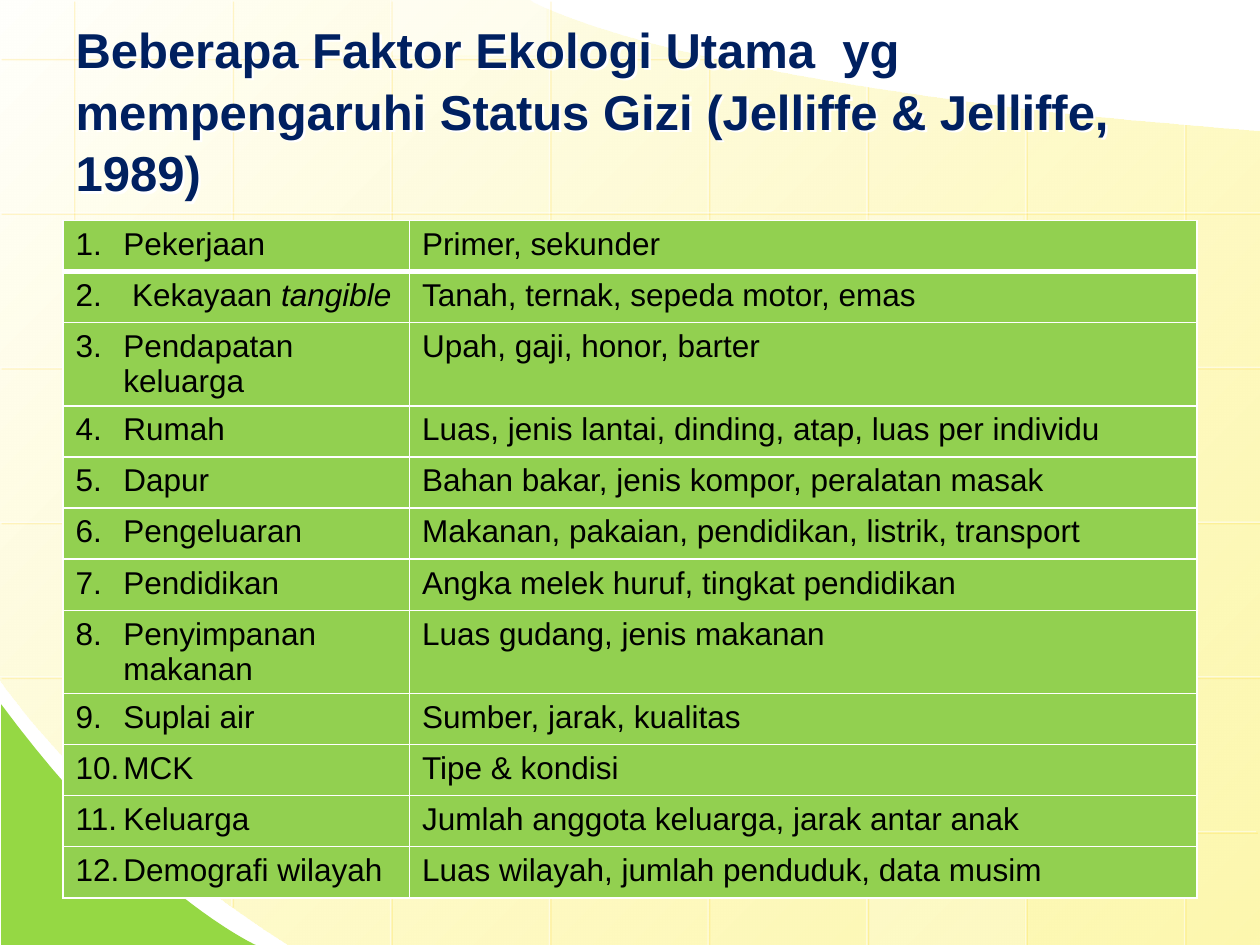
from dataclasses import dataclass
from typing import NamedTuple

from lxml import etree
from pptx import Presentation
from pptx.dml.color import RGBColor
from pptx.enum.shapes import MSO_CONNECTOR, MSO_SHAPE
from pptx.enum.text import MSO_ANCHOR, MSO_AUTO_SIZE, PP_ALIGN
from pptx.oxml.ns import qn
from pptx.util import Inches, Pt

STRAIGHT = MSO_CONNECTOR.STRAIGHT
RECTANGLE = MSO_SHAPE.RECTANGLE
MIDDLE = MSO_ANCHOR.MIDDLE
NO_AUTOFIT = MSO_AUTO_SIZE.NONE
LEFT = PP_ALIGN.LEFT
CURVE_STEPS = 24


@dataclass(frozen=True)
class Theme:
    font: str = "Arial"
    title_size: float = 28
    body_size: float = 18
    title: str = "002060"
    text: str = "000000"
    white: str = "FFFFFF"
    cell: str = "92D050"
    corner: str = "95D844"
    wash_start: str = "FFFFFC"
    wash_end: str = "FDF58D"
    line_shadow: str = "FFCC00"


class GridLine(NamedTuple):
    x1: float
    y1: float
    x2: float
    y2: float


class Tile(NamedTuple):
    left: float
    top: float
    height: float
    opacity: int


class Factor(NamedTuple):
    name: str
    examples: str
    emphasis: str = ""


THEME = Theme()
TITLE = "Beberapa Faktor Ekologi Utama  yg mempengaruhi Status Gizi (Jelliffe & Jelliffe, 1989)"
FACTORS = [
    Factor("Pekerjaan", "Primer, sekunder"),
    Factor(" Kekayaan ", "Tanah, ternak, sepeda motor, emas", "tangible"),
    Factor("Pendapatan keluarga", "Upah, gaji, honor, barter"),
    Factor("Rumah", "Luas, jenis lantai, dinding, atap, luas per individu"),
    Factor("Dapur", "Bahan bakar, jenis kompor, peralatan masak"),
    Factor("Pengeluaran", "Makanan, pakaian, pendidikan, listrik, transport"),
    Factor("Pendidikan", "Angka melek huruf, tingkat pendidikan"),
    Factor("Penyimpanan makanan", "Luas gudang, jenis makanan"),
    Factor("Suplai air", "Sumber, jarak, kualitas"),
    Factor("MCK", "Tipe & kondisi"),
    Factor("Keluarga", "Jumlah anggota keluarga, jarak antar anak"),
    Factor("Demografi wilayah", "Luas wilayah, jumlah penduduk, data musim"),
]

# Grid lines follow the curved edges of the background
VERTICAL_SPANS = [(0, 6.09), (0, 7.19), (0, 7.5), (0, 7.52),
                  (0.43, 7.52), (0.68, 7.52), (0.85, 7.52), (0.98, 7.52)]
HORIZONTAL_SPANS = [(5.68, 0), (10.01, 0), (10.01, 0), (10.01, 0), (10.01, 0), (9.97, 1.11)]
GRID_LINES = [GridLine(0.58 + 1.26 * i, top, 0.58 + 1.26 * i, bottom)
              for i, (top, bottom) in enumerate(VERTICAL_SPANS)]
GRID_LINES += [GridLine(right, 0.46 + 1.228 * i, left, 0.46 + 1.228 * i)
               for i, (right, left) in enumerate(HORIZONTAL_SPANS)]
TILES = [
    Tile(4.38, 2.94, 1.18, 25), Tile(8.16, 5.4, 1.18, 30), Tile(0.6, 4.16, 1.18, 20),
    Tile(6.9, 6.63, 0.87, 20), Tile(3.11, 0, 0.44, 40), Tile(3.12, 5.4, 1.18, 30),
    Tile(6.89, 1.71, 1.18, 30),
]


def set_opacity(parent, percent: int) -> None:
    """Apply opacity to the last colour inside an element."""
    color = parent.findall(".//" + qn("a:srgbClr"))[-1]
    etree.SubElement(color, qn("a:alpha"), val=str(percent * 1000))


def add_shadow(properties, color: str, opacity: int, distance: float) -> None:
    effects = etree.SubElement(properties, qn("a:effectLst"))
    shadow = etree.SubElement(effects, qn("a:outerShdw"), blurRad="0",
                              dist=str(Pt(distance)), dir="2700000", algn="ctr", rotWithShape="0")
    etree.SubElement(shadow, qn("a:srgbClr"), val=color)
    set_opacity(shadow, opacity)


def add_text(paragraph, text: str, *, size: float, color: str,
             bold: bool = False, italic: bool = False) -> None:
    run = paragraph.add_run()
    run.text = text
    run.font.name = THEME.font
    run.font.size = Pt(size)
    run.font.bold = bold
    run.font.italic = italic
    run.font.color.rgb = RGBColor.from_string(color)


def curve(p0, p1, p2, p3) -> list[tuple[float, float]]:
    """Points along a cubic curve, without its start."""
    points = []
    for step in range(1, CURVE_STEPS + 1):
        t = step / CURVE_STEPS
        weights = ((1 - t) ** 3, 3 * t * (1 - t) ** 2, 3 * t * t * (1 - t), t ** 3)
        points.append(tuple(sum(w * p[axis] for w, p in zip(weights, (p0, p1, p2, p3)))
                            for axis in (0, 1)))
    return points


def add_outline(slide, points: list[tuple[float, float]]):
    corners = [(Inches(x), Inches(y)) for x, y in points]
    builder = slide.shapes.build_freeform(*corners[0])
    builder.add_line_segments(corners[1:], close=True)
    shape = builder.convert_to_shape()
    shape.shadow.inherit = False
    shape.line.fill.background()
    return shape


def add_background(slide) -> None:
    # Yellow wash
    wash = add_outline(slide, [
        (10, 1.04), (10, 7.5), (2.3, 7.5),
        *curve((2.3, 7.5), (0.86, 6.61), (-0.01, 5.39), (0, 5.39)),
        (-0.01, -0.01), (4.2, 0),
        *curve((4.2, 0), (4.2, 0.01), (5.36, 0.69), (10, 1.04)),
    ])
    wash.fill.gradient()
    wash.fill.gradient_angle = 315
    for stop, color, position in zip(wash.fill.gradient_stops,
                                     (THEME.wash_start, THEME.wash_end), (0, 1)):
        stop.color.rgb = RGBColor.from_string(color)
        stop.position = position
    set_opacity(wash.element.spPr.find(qn("a:gradFill")), 70)

    # Green corner
    corner = add_outline(slide, [
        (0.01, 5.59), (0.01, 7.5), (2.03, 7.5),
        *curve((2.03, 7.5), (2.03, 7.5), (1.12, 7.09), (0.01, 5.59)),
    ])
    corner.fill.solid()
    corner.fill.fore_color.rgb = RGBColor.from_string(THEME.corner)

    # Grid lines and pale tiles
    for grid_line in GRID_LINES:
        connector = slide.shapes.add_connector(STRAIGHT, *map(Inches, grid_line))
        connector.line.width = Pt(0.75)
        connector.line.color.rgb = RGBColor.from_string(THEME.white)
        set_opacity(connector.element.spPr, 50)
        add_shadow(connector.element.spPr, THEME.line_shadow, 35, 1.4)
    for tile in TILES:
        shape = slide.shapes.add_shape(RECTANGLE, Inches(tile.left), Inches(tile.top),
                                       Inches(1.23), Inches(tile.height))
        shape.shadow.inherit = False
        shape.line.fill.background()
        shape.fill.solid()
        shape.fill.fore_color.rgb = RGBColor.from_string(THEME.white)
        set_opacity(shape.element.spPr, tile.opacity)


def add_title(slide) -> None:
    title = slide.shapes.title
    title.left, title.top, title.width, title.height = map(Inches, (0.5, 0.36, 9, 1.01))
    title.element.getparent().append(title.element)  # in front of the background
    frame = title.text_frame
    frame.auto_size = NO_AUTOFIT
    frame.vertical_anchor = MIDDLE
    paragraph = frame.paragraphs[0]
    paragraph.alignment = LEFT
    paragraph.line_spacing = 1.05
    add_text(paragraph, TITLE, size=THEME.title_size, color=THEME.title, bold=True)
    title.fill.background()
    add_shadow(title.element.spPr, THEME.white, 100, 2)


def number_paragraph(paragraph, number: int) -> None:
    properties = paragraph._p.get_or_add_pPr()
    properties.set("marL", str(Inches(0.38)))
    properties.set("indent", str(Inches(-0.38)))
    etree.SubElement(properties, qn("a:buFont"), typeface=THEME.font)
    etree.SubElement(properties, qn("a:buAutoNum"), type="arabicPeriod", startAt=str(number))


def format_cell(cell, top: float, bottom: float) -> None:
    cell.fill.solid()
    cell.fill.fore_color.rgb = RGBColor.from_string(THEME.cell)
    properties = cell._tc.get_or_add_tcPr()
    for index, (side, width) in enumerate(zip("LRTB", (1, 1, top, bottom))):
        border = etree.Element(qn(f"a:ln{side}"), w=str(Pt(width)))
        fill = etree.SubElement(border, qn("a:solidFill"))
        etree.SubElement(fill, qn("a:srgbClr"), val=THEME.white)
        properties.insert(index, border)


def add_factor_table(slide) -> None:
    row_height = Pt(29.2)
    table = slide.shapes.add_table(len(FACTORS), 2, Inches(0.5), Inches(1.75),
                                   Inches(9), row_height * len(FACTORS)).table
    table.first_row = table.horz_banding = False
    table.columns[0].width, table.columns[1].width = Inches(2.75), Inches(6.25)
    style = {"size": THEME.body_size, "color": THEME.text}
    for index, factor in enumerate(FACTORS):
        table.rows[index].height = row_height
        name_cell, examples_cell = table.cell(index, 0), table.cell(index, 1)
        for cell in (name_cell, examples_cell):
            format_cell(cell, top=3 if index == 1 else 1, bottom=3 if index == 0 else 1)
        name = name_cell.text_frame.paragraphs[0]
        number_paragraph(name, index + 1)
        add_text(name, factor.name, **style)
        if factor.emphasis:
            add_text(name, factor.emphasis, italic=True, **style)
        add_text(examples_cell.text_frame.paragraphs[0], factor.examples, **style)


def main() -> None:
    presentation = Presentation()
    presentation.slide_width, presentation.slide_height = Inches(10), Inches(7.5)
    slide = presentation.slides.add_slide(presentation.slide_layouts[5])
    add_background(slide)
    add_title(slide)
    add_factor_table(slide)
    presentation.save("out.pptx")


if __name__ == "__main__":
    main()
